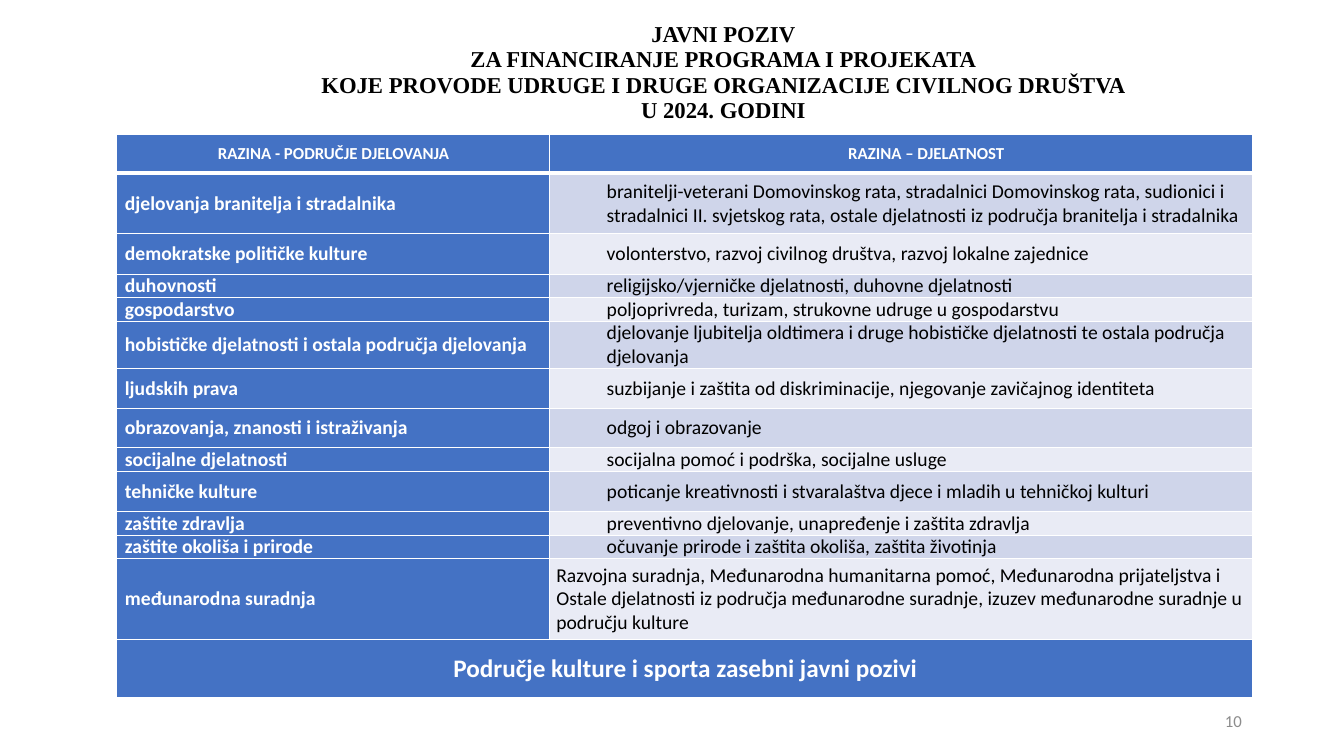
from lxml import etree
from pptx import Presentation, util as u
from pptx.dml.color import RGBColor
from pptx.enum import text
from pptx.oxml import ns

Pt = u.Pt
COLOURS = {"blue": "4472C4", "dark_band": "CFD5EA", "light_band": "E9EBF5",
           "white": "FFFFFF", "black": "000000", "grey": "8C8C8C"}
CENTRE, LEFT, RIGHT = text.PP_ALIGN.CENTER, text.PP_ALIGN.LEFT, text.PP_ALIGN.RIGHT
TITLE = ("JAVNI POZIV\vZA FINANCIRANJE PROGRAMA I PROJEKATA\v"
         "KOJE PROVODE UDRUGE I DRUGE ORGANIZACIJE CIVILNOG DRUŠTVA\vU 2024. GODINI")
HEADINGS = ("RAZINA - PODRUČJE DJELOVANJA", "RAZINA – DJELATNOST")
AREAS = [
    ("djelovanja branitelja i stradalnika",
     "branitelji-veterani Domovinskog rata, stradalnici Domovinskog rata, sudionici i "
     "stradalnici II. svjetskog rata, ostale djelatnosti iz područja branitelja i stradalnika", 43.2),
    ("demokratske političke kulture",
     "volonterstvo, razvoj civilnog društva, razvoj lokalne zajednice", 28.8),
    ("duhovnosti", "religijsko/vjerničke djelatnosti, duhovne djelatnosti", 14.4),
    ("gospodarstvo", "poljoprivreda, turizam, strukovne udruge u gospodarstvu", 14.4),
    ("hobističke djelatnosti i ostala područja djelovanja",
     "djelovanje ljubitelja oldtimera i druge hobističke djelatnosti te ostala područja djelovanja", 28.8),
    ("ljudskih prava",
     "suzbijanje i zaštita od diskriminacije, njegovanje zavičajnog identiteta", 28.8),
    ("obrazovanja, znanosti i istraživanja", "odgoj i obrazovanje", 28),
    ("socijalne djelatnosti", "socijalna pomoć i podrška, socijalne usluge", 14.4),
    ("tehničke kulture",
     "poticanje kreativnosti i stvaralaštva djece i mladih u tehničkoj kulturi", 28.8),
    ("zaštite zdravlja", "preventivno djelovanje, unapređenje i zaštita zdravlja", 14.4),
    ("zaštite okoliša i prirode", "očuvanje prirode i zaštita okoliša, zaštita životinja", 14.4),
    ("međunarodna suradnja",
     "Razvojna suradnja, Međunarodna humanitarna pomoć, Međunarodna prijateljstva i "
     "Ostale djelatnosti iz područja međunarodne suradnje, izuzev međunarodne suradnje u "
     "području kulture", 57.6),
]
CLOSING = "Područje kulture i sporta zasebni javni pozivi"


def set_values(target, values):
    """Set each named attribute of the target."""
    for name, value in values.items():
        setattr(target, name, value)


def write_para(para, words, size, colour, bold=False, font="Calibri", **layout):
    """Fill a paragraph and format its runs."""
    para.text = words
    set_values(para, layout)
    for span in para.runs:
        set_values(span.font, {"size": Pt(size), "bold": bold, "name": font})
        span.font.color.rgb = RGBColor.from_string(COLOURS[colour])


def add_text(page, place, words, size, colour, inset=0, **style):
    """Add a wrapped, vertically centred text box."""
    box = page.shapes.add_textbox(*map(Pt, place))
    set_values(box.text_frame, {
        "word_wrap": True, "vertical_anchor": text.MSO_ANCHOR.MIDDLE,
        "margin_left": Pt(inset), "margin_right": Pt(inset), "margin_top": 0, "margin_bottom": 0})
    write_para(box.text_frame.paragraphs[0], words, size, colour, **style)


def set_borders(cell, bottom):
    """Draw white cell borders with the given bottom width."""
    properties = cell._tc.get_or_add_tcPr()
    for side, width in (("L", 1), ("R", 1), ("T", 1), ("B", bottom)):
        line = etree.SubElement(properties, ns.qn(f"a:ln{side}"), w=str(Pt(width)))
        fill = etree.SubElement(line, ns.qn("a:solidFill"))
        etree.SubElement(fill, ns.qn("a:srgbClr"), val=COLOURS["white"])


def fill_cell(cell, words, fill, size=14, colour="white", bold=True, indent=1.44, after=0,
              align=LEFT, bottom=1):
    """Write, indent, fill and border one table cell."""
    set_borders(cell, bottom)
    set_values(cell, {"margin_left": Pt(5), "margin_right": Pt(5), "margin_top": 0,
                      "margin_bottom": 0, "vertical_anchor": text.MSO_ANCHOR.MIDDLE})
    cell.fill.solid()
    cell.fill.fore_color.rgb = RGBColor.from_string(COLOURS[fill])
    para = cell.text_frame.paragraphs[0]
    write_para(para, words, size, colour, bold, alignment=align, space_after=Pt(after))
    layout = para._p.get_or_add_pPr()
    layout.set("marL", str(Pt(indent)))
    layout.set("indent", "0")


def add_areas_table(page):
    """Add the table of areas and activities."""
    heights = [28, *(height for _, _, height in AREAS), 41.8]
    last = len(heights) - 1
    grid = page.shapes.add_table(len(heights), 2, Pt(82.8), Pt(95.8), Pt(812.2), Pt(sum(heights))).table
    for column, width in zip(grid.columns, (309.6, 502.6)):
        column.width = Pt(width)
    for row, height in zip(grid.rows, heights):
        row.height = Pt(height)
    for column, (heading, indent) in enumerate(zip(HEADINGS, (1.44, 36))):
        fill_cell(grid.cell(0, column), heading, "blue", size=12, indent=indent,
                  after=6 * column, align=CENTRE, bottom=3)
    for number, (area, activities, _) in enumerate(AREAS, 1):
        final = number == len(AREAS)
        fill_cell(grid.cell(number, 0), area, "blue", after=6 if final else 0)
        fill_cell(grid.cell(number, 1), activities, "dark_band" if number % 2 else "light_band",
                  colour="black", bold=False, indent=0 if final else 36, after=6)
    grid.cell(last, 0).merge(grid.cell(last, 1))
    fill_cell(grid.cell(last, 0), CLOSING, "blue", size=18, after=6, align=CENTRE)


def main():
    """Build and save the slide."""
    deck = Presentation()
    set_values(deck, {"slide_width": Pt(960), "slide_height": Pt(540)})
    page = deck.slides.add_slide(deck.slide_layouts[6])
    add_text(page, (165.6, 16.5, 702, 71), TITLE, 16.2, "black", bold=True,
             font="Times New Roman", alignment=CENTRE, line_spacing=0.94)
    add_areas_table(page)
    add_text(page, (678.2, 500.4, 216, 28.8), "10", 12, "grey", inset=7.2, alignment=RIGHT)
    deck.save("out.pptx")


if __name__ == "__main__":
    main()
